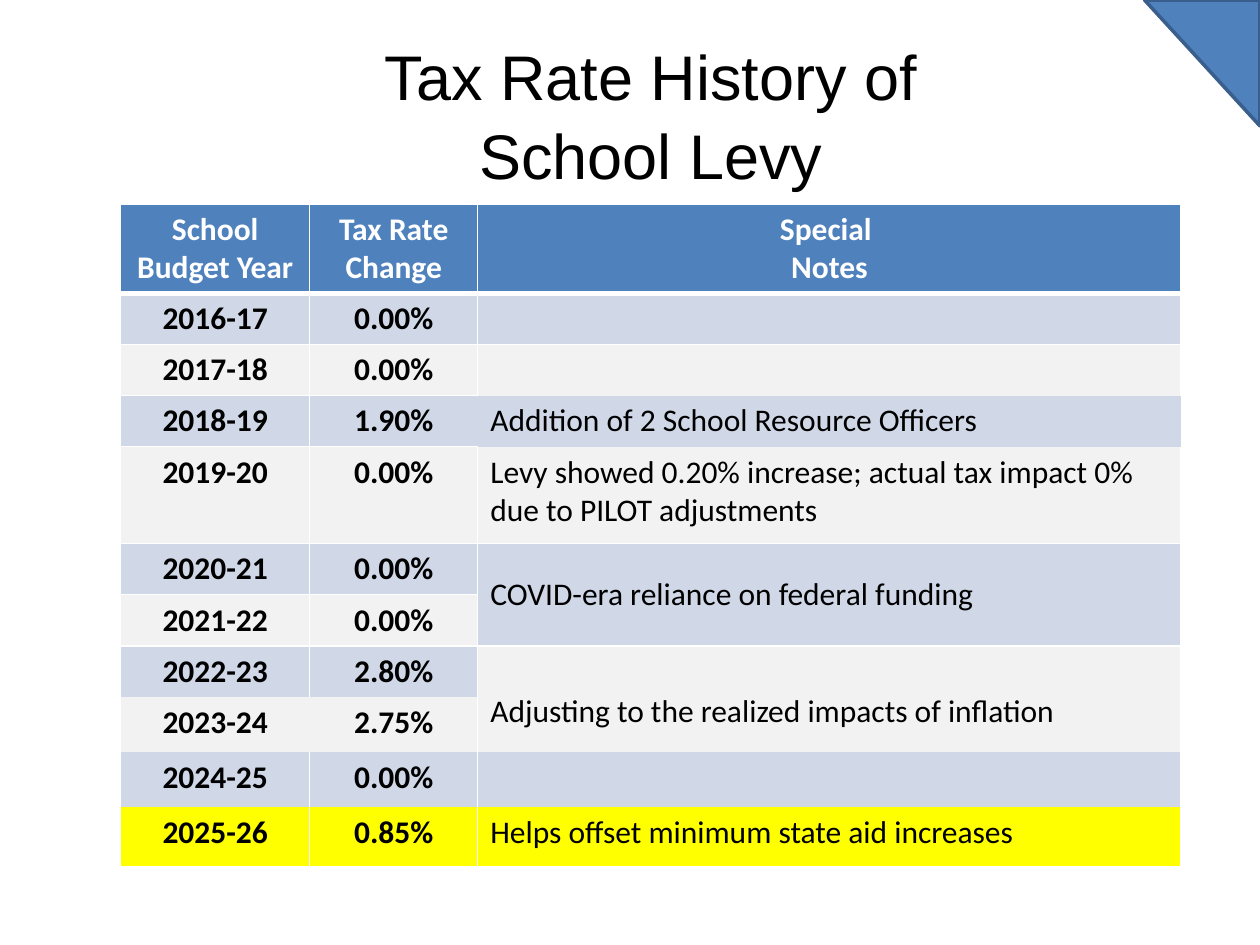
from pptx import Presentation
from pptx.dml.color import RGBColor
from pptx.enum.shapes import MSO_SHAPE
from pptx.enum.text import MSO_ANCHOR, PP_ALIGN
from pptx.oxml.ns import qn
from pptx.util import Pt
from lxml.etree import SubElement

COLORS = {
    "header": "4F81BD",
    "outline": "3A5F8C",
    "band": "D0D8E8",
    "plain": "F2F2F2",
    "highlight": "FFFF00",
    "white": "FFFFFF",
    "black": "000000",
}
HEADERS = ["School Budget Year", "Tax Rate Change", "Special \nNotes"]
HISTORY = [
    ("2016-17", "0.00%", ""),
    ("2017-18", "0.00%", ""),
    ("2018-19", "1.90%", "Addition of 2 School Resource Officers"),
    ("2019-20", "0.00%", "Levy showed 0.20% increase; actual tax impact 0% due to PILOT adjustments"),
    ("2020-21", "0.00%", "COVID-era reliance on federal funding"),
    ("2021-22", "0.00%", ""),
    ("2022-23", "2.80%", "Adjusting to the realized impacts of inflation"),
    ("2023-24", "2.75%", ""),
    ("2024-25", "0.00%", ""),
    ("2025-26", "0.85%", "Helps offset minimum state aid increases"),
]
COLUMN_WIDTHS = [108, 96, 402]
ROW_HEIGHTS = [50, 29.2, 29.2, 29.2, 55.4, 29.2, 29.2, 29.2, 31.4, 31.4, 34.3]
NOTES_COLUMN = 2
OPEN_SIDES = {
    (2, 2): "B", (3, 1): "R", (3, 2): "LRTB", (4, 2): "T",
    (7, 0): "B", (7, 1): "B", (8, 0): "LRTB", (8, 1): "LRTB", (8, 2): "B",
    (9, 0): "TB", (9, 1): "TB", (9, 2): "TB",
    (10, 0): "T", (10, 1): "T", (10, 2): "T",
}


def color(name):
    return RGBColor.from_string(COLORS[name])


def format_paragraph(paragraph, alignment, text_color, **formats):
    paragraph.alignment = alignment
    for run in paragraph.runs:
        run.font.color.rgb = color(text_color)
        for name, value in formats.items():
            setattr(run.font, name, value)


def set_borders(cell, row, column):
    properties = cell._tc.get_or_add_tcPr()
    for position, side in enumerate("LRTB"):
        thick = (row, side) in ((0, "B"), (1, "T"))
        line = properties.makeelement(qn(f"a:ln{side}"), {"w": str(Pt(3 if thick else 1))})
        if side in OPEN_SIDES.get((row, column), ""):
            SubElement(line, qn("a:noFill"))
        else:
            fill = SubElement(line, qn("a:solidFill"))
            SubElement(fill, qn("a:srgbClr"), val=COLORS["white"])
        properties.insert(position, line)


def row_fill(row, column):
    if row == 0:
        return "header"
    if row == len(HISTORY):
        return "highlight"
    if column == NOTES_COLUMN and row in (5, 6):
        return "band"
    if column == NOTES_COLUMN and row in (7, 8):
        return "plain"
    return "band" if row % 2 else "plain"


def add_title(slide, left, top, width, height):
    title = slide.shapes.title
    box = {"left": left, "top": top, "width": width, "height": height}
    for name, value in box.items():
        setattr(title, name, Pt(value))
    title.text_frame.text = "Tax Rate History of School Levy"
    title.text_frame.word_wrap = True
    title.text_frame.vertical_anchor = MSO_ANCHOR.MIDDLE
    paragraph = title.text_frame.paragraphs[0]
    paragraph.line_spacing = 1.05
    format_paragraph(paragraph, PP_ALIGN.CENTER, "black", name="Arial", size=Pt(36))


def add_corner(slide, left, top, width, height):
    corner = slide.shapes.add_shape(
        MSO_SHAPE.RIGHT_TRIANGLE, Pt(left), Pt(top), Pt(width), Pt(height))
    corner.rotation = 180
    corner.shadow.inherit = False
    corner.fill.solid()
    corner.fill.fore_color.rgb = color("header")
    corner.line.color.rgb = color("outline")
    corner.line.width = Pt(2)


def add_history_table(slide, left, top):
    rows = [HEADERS, *HISTORY]
    table = slide.shapes.add_table(
        len(rows), len(HEADERS), Pt(left), Pt(top),
        Pt(sum(COLUMN_WIDTHS)), Pt(sum(ROW_HEIGHTS))).table
    for column, width in zip(table.columns, COLUMN_WIDTHS):
        column.width = Pt(width)
    for row, height in zip(table.rows, ROW_HEIGHTS):
        row.height = Pt(height)
    for row, texts in enumerate(rows):
        for column, text in enumerate(texts):
            cell = table.cell(row, column)
            is_note = row > 0 and column == NOTES_COLUMN
            cell.text = text
            cell.fill.solid()
            cell.fill.fore_color.rgb = color(row_fill(row, column))
            set_borders(cell, row, column)
            for paragraph in cell.text_frame.paragraphs:
                format_paragraph(
                    paragraph, PP_ALIGN.LEFT if is_note else PP_ALIGN.CENTER,
                    "black" if row else "white",
                    name="Calibri", size=Pt(18), bold=not is_note)
    for first_row, anchor in ((5, MSO_ANCHOR.MIDDLE), (7, MSO_ANCHOR.BOTTOM)):
        note = table.cell(first_row, NOTES_COLUMN)
        note.merge(table.cell(first_row + 1, NOTES_COLUMN))
        note.vertical_anchor = anchor
    table.cell(7, NOTES_COLUMN).margin_bottom = Pt(12)


def main():
    presentation = Presentation()
    presentation.slide_width = Pt(720)
    presentation.slide_height = Pt(540)
    slide = presentation.slides.add_slide(presentation.slide_layouts[5])
    add_title(slide, 156, 19.5, 432, 90)
    add_corner(slide, 654, 0, 66, 72)
    add_history_table(slide, 69, 116.5)
    presentation.save("out.pptx")


if __name__ == "__main__":
    main()
